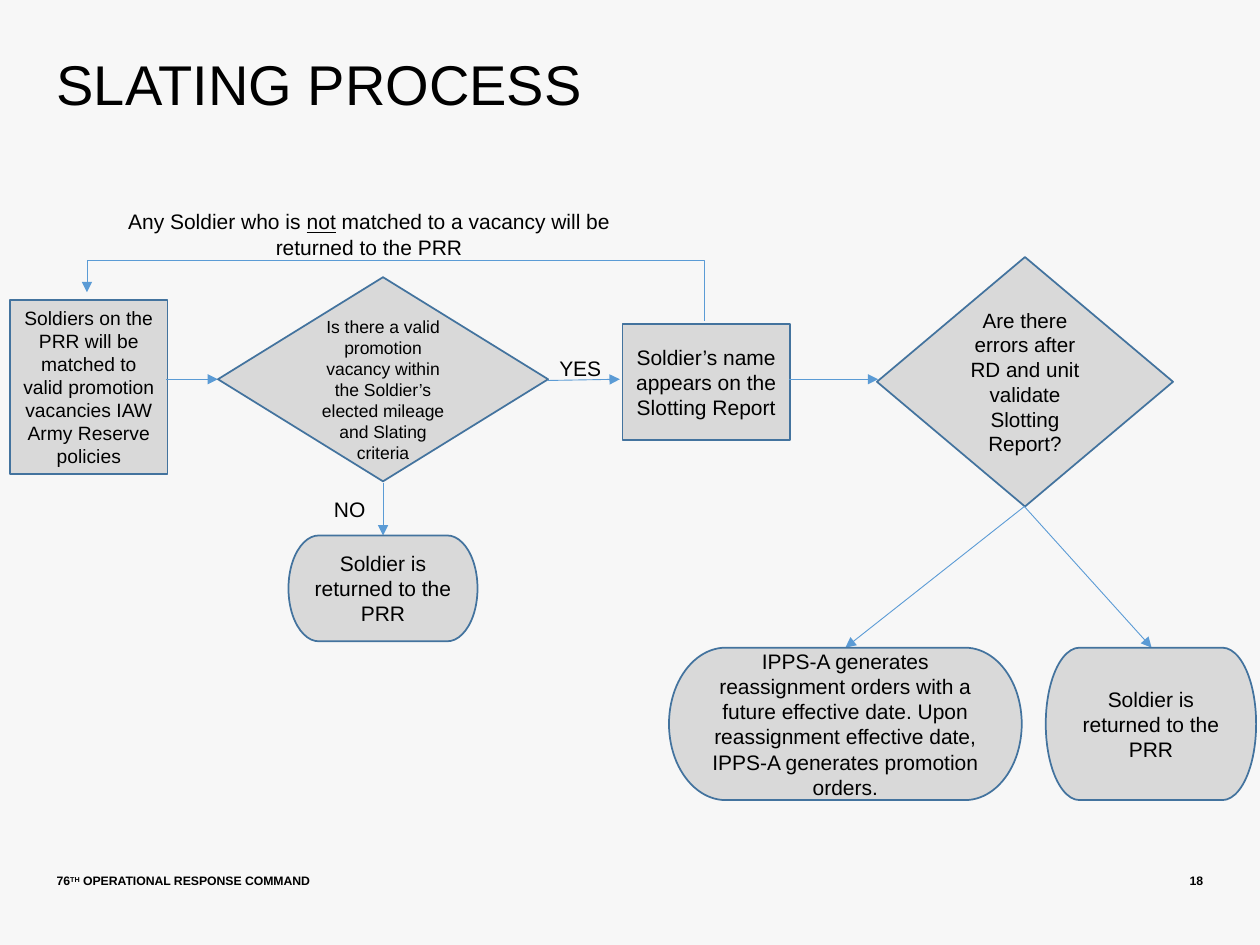
from lxml import etree
from pptx import Presentation
from pptx.dml.color import RGBColor
from pptx.enum.shapes import MSO_CONNECTOR, MSO_SHAPE
from pptx.enum.text import MSO_ANCHOR, PP_ALIGN
from pptx.oxml.ns import qn
from pptx.util import Inches, Pt

COLORS = {"back": "F7F7F7", "box": "D9D9D9", "edge": "43739E",
          "arrow": "5B9BD5", "text": "000000"}
BOX, DECISION = MSO_SHAPE.FLOWCHART_PROCESS, MSO_SHAPE.FLOWCHART_DECISION
DIAMOND, END = MSO_SHAPE.DIAMOND, MSO_SHAPE.FLOWCHART_TERMINATOR
STRAIGHT, ELBOW = MSO_CONNECTOR.STRAIGHT, MSO_CONNECTOR.ELBOW
LEFT, CENTER, RIGHT = PP_ALIGN.LEFT, PP_ALIGN.CENTER, PP_ALIGN.RIGHT
TOP, MIDDLE, BOTTOM = MSO_ANCHOR.TOP, MSO_ANCHOR.MIDDLE, MSO_ANCHOR.BOTTOM
WIDTH, HEIGHT = Inches(10), Inches(7.5)
COLS = 100


def rgb(name):
    return RGBColor.from_string(COLORS[name])


def grid(*cells):
    return [round(WIDTH / COLS * c) for c in cells]


def write(tf, text, size=12, align=CENTER, anchor=TOP, bold=False,
          wrap=True, inset=None, spacing=None):
    """Fill a text frame; text is a string or a list of (text, style) pairs."""
    tf.word_wrap, tf.vertical_anchor = wrap, anchor
    if inset is not None:
        tf.margin_left, tf.margin_top, tf.margin_right, tf.margin_bottom = grid(*inset)
    p = tf.paragraphs[0]
    p.alignment = align
    if spacing:
        p.line_spacing = spacing
    for part, style in [(text, "")] if isinstance(text, str) else text:
        r = p.add_run()
        r.text = part
        r.font.name, r.font.size, r.font.bold = "Arial", Pt(size), bold
        r.font.color.rgb = rgb("text")
        if style == "underline":
            r.font.underline = True
        elif style == "super":
            r.font._element.set("baseline", "30000")


class Flow:
    """Draws flowchart parts on one slide, placed on a square grid 100 columns wide."""

    def __init__(self, prs):
        self.slide = prs.slides.add_slide(prs.slide_layouts[6])
        fill = self.slide.background.fill
        fill.solid()
        fill.fore_color.rgb = rgb("back")

    def label(self, x, y, w, h, text, **fmt):
        sp = self.slide.shapes.add_textbox(*grid(x, y, w, h))
        write(sp.text_frame, text, **fmt)

    def step(self, kind, x, y, w, h, text, **fmt):
        sp = self.slide.shapes.add_shape(kind, *grid(x, y, w, h))
        sp.shadow.inherit = False
        sp.fill.solid()
        sp.fill.fore_color.rgb = rgb("box")
        sp.line.color.rgb = rgb("edge")
        sp.line.width = Pt(1)
        write(sp.text_frame, text, anchor=MIDDLE, **fmt)

    def arrow(self, x1, y1, x2, y2, kind=STRAIGHT):
        sp = self.slide.shapes.add_connector(kind, *grid(x1, y1, x2, y2))
        sp.line.color.rgb = rgb("arrow")
        sp.line.width = Pt(0.5)
        etree.SubElement(sp.line._get_or_add_ln(), qn("a:tailEnd"), type="triangle")
        etree.SubElement(sp._element.spPr, qn("a:effectLst"))
        return sp

    def loop_back(self, x1, y1, x2, y2, top):
        w, h = y1 - y2, x1 - x2
        cx, cy = (x1 + x2) / 2, (y1 + y2) / 2
        sp = self.arrow(cx - w / 2, cy + h / 2, cx + w / 2, cy - h / 2, ELBOW)
        spPr = sp._element.spPr
        spPr.find(qn("a:xfrm")).set("rot", str(270 * 60000))
        geom = spPr.find(qn("a:prstGeom"))
        av = geom.find(qn("a:avLst"))
        if av is None:
            av = etree.SubElement(geom, qn("a:avLst"))
        bend = round((y1 - top) / w * 100000)
        etree.SubElement(av, qn("a:gd"), name="adj1", fmla=f"val {bend}")


def main():
    prs = Presentation()
    prs.slide_width, prs.slide_height = WIDTH, HEIGHT
    s = Flow(prs)
    flush = (0, 0, 0, 0)
    footer = dict(size=7, bold=True, anchor=BOTTOM, wrap=False, inset=flush)
    s.label(4.5, 68.5, 44, 2, [("76", ""), ("TH", "super"),
            (" OPERATIONAL RESPONSE COMMAND", "")], align=LEFT, **footer)
    s.label(86.8, 68.5, 8.7, 2, "18", align=RIGHT, **footer)
    s.label(4.5, 4.5, 67.5, 10, "SLATING PROCESS", size=32, align=LEFT,
            inset=flush, spacing=0.9)

    s.label(6, 16.1, 46.6, 5, [("Any Soldier who is ", ""), ("not", "underline"),
            (" matched to a vacancy will be returned to the PRR", "")])
    s.loop_back(55.9, 25.5, 6.9, 23.2, top=20.7)

    s.step(BOX, 0.8, 23.8, 12.5, 13.8, "Soldiers on the PRR will be matched to valid "
           "promotion vacancies IAW Army Reserve policies", size=11)
    s.arrow(13.2, 30.1, 17.3, 30.1)
    s.step(DECISION, 17.3, 22, 26.2, 16.2, "Is there a valid promotion vacancy within "
           "the Soldier’s elected mileage and Slating criteria", size=10,
           inset=(1, 2.1, 1, 0.5))
    s.label(43.4, 27.7, 13.1, 3, "YES", align=LEFT)
    s.arrow(43.5, 30.2, 49.2, 30.1)
    s.step(BOX, 49.4, 25.7, 13.3, 9.2, "Soldier’s name appears on the Slotting Report")
    s.arrow(62.6, 30.1, 69.7, 30.1)
    s.step(DIAMOND, 69.6, 20.4, 23.5, 19.8, "Are there errors after RD and unit "
           "validate Slotting Report?", size=11.8)

    returned = "Soldier is returned to the PRR"
    s.arrow(81.3, 40.2, 91.4, 51.4)
    s.arrow(81.3, 40.2, 67.1, 51.4)
    s.step(END, 83, 51.4, 16.7, 12.1, returned)
    s.step(END, 53.1, 51.4, 28, 12.1, "IPPS-A generates reassignment orders with a "
           "future effective date. Upon reassignment effective date, IPPS-A generates "
           "promotion orders.")
    s.label(23.3, 38.9, 8.9, 3, "NO")
    s.arrow(30.4, 38.3, 30.4, 42.5)
    s.step(END, 22.9, 42.5, 15, 8.4, returned)
    prs.save("out.pptx")


if __name__ == "__main__":
    main()
